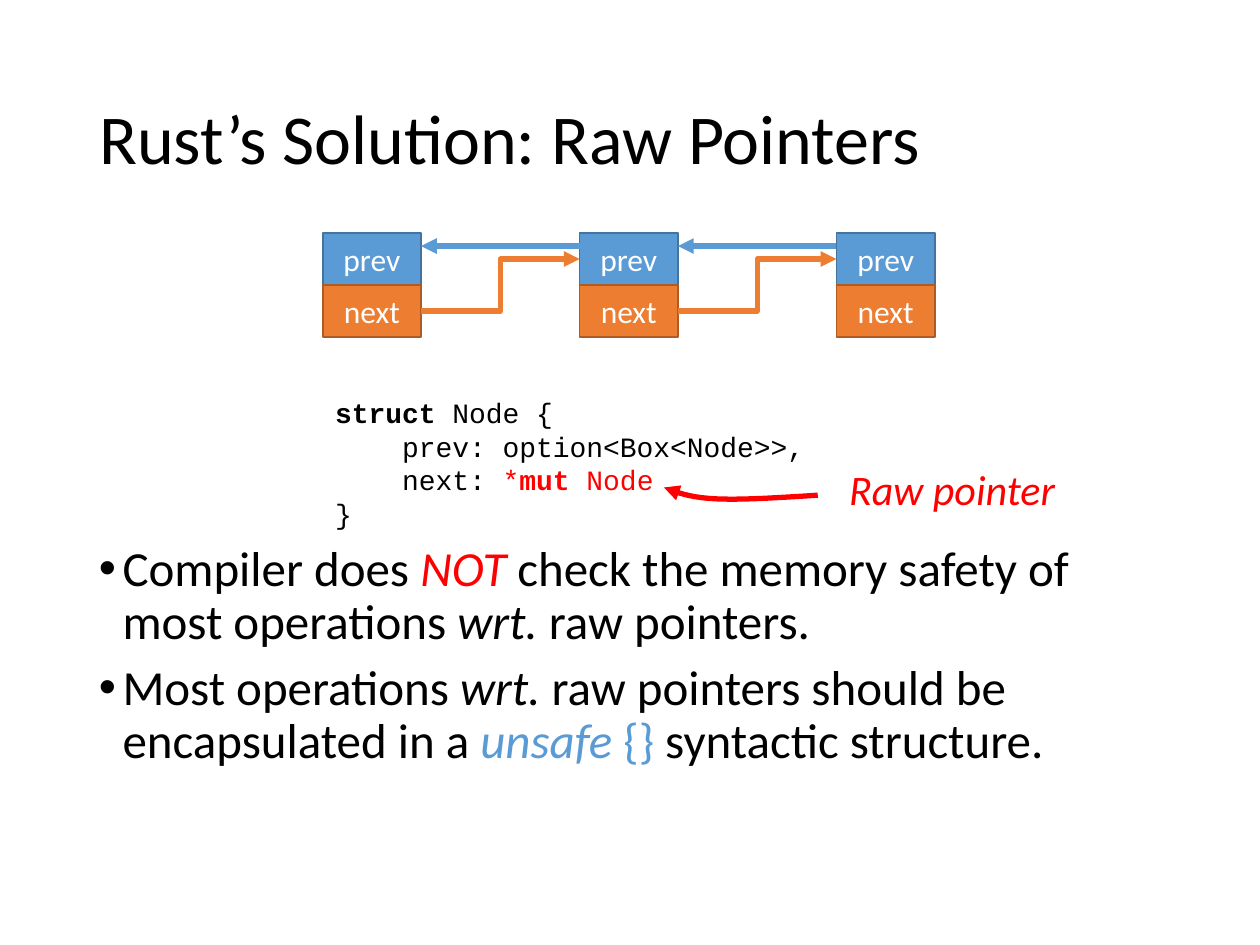
from lxml import etree
from pptx import Presentation
from pptx.dml.color import RGBColor
from pptx.enum.shapes import MSO_CONNECTOR, MSO_SHAPE
from pptx.enum.text import MSO_ANCHOR, MSO_AUTO_SIZE, PP_ALIGN
from pptx.oxml.ns import qn
from pptx.util import Pt

RECTANGLE = MSO_SHAPE.RECTANGLE
STRAIGHT, ELBOW = MSO_CONNECTOR.STRAIGHT, MSO_CONNECTOR.ELBOW
MIDDLE = MSO_ANCHOR.MIDDLE
LEFT, CENTER = PP_ALIGN.LEFT, PP_ALIGN.CENTER
NO_AUTOFIT, GROW = MSO_AUTO_SIZE.NONE, MSO_AUTO_SIZE.SHAPE_TO_FIT_TEXT
LEFT_SIDE, RIGHT_SIDE = 1, 3
TITLE_ONLY = 5

BLACK, WHITE, RED = "000000", "FFFFFF", "FF0000"
BLUE, DARK_BLUE = "5B9BD5", "43739E"
ORANGE, DARK_ORANGE = "ED7D31", "AF5C24"
SANS, MONO = "Calibri", "Courier New"


def color(value):
    return RGBColor.from_string(value)


def bezier(start, first, second, end, steps=10):
    """Return points along a cubic curve, without its start."""
    points = []
    for step in range(1, steps + 1):
        t = step / steps
        weights = ((1 - t) ** 3, 3 * t * (1 - t) ** 2, 3 * t * t * (1 - t), t ** 3)
        points.append(tuple(
            sum(w * p[axis] for w, p in zip(weights, (start, first, second, end)))
            for axis in (0, 1)))
    return points


class SlideBuilder:
    """Holds the style and the current slide; lengths are in points."""

    arrow_width = 3
    border_width = 1

    def __init__(self, slide):
        self.slide = slide
        self.shapes = slide.shapes

    def set_font(self, font, size, name=SANS, fill=BLACK):
        font.size, font.name = Pt(size), name
        font.color.rgb = color(fill)

    def add_spans(self, para, spans):
        """Add runs given as plain text or as (text, font settings)."""
        for item in spans:
            text, look = (item, {}) if isinstance(item, str) else item
            span = para.add_run()
            span.text = text
            if "fill" in look:
                span.font.color.rgb = color(look["fill"])
            if "bold" in look:
                span.font.bold = look["bold"]
            if "italic" in look:
                span.font.italic = look["italic"]

    def title(self, text, left, top, width, height):
        box = self.shapes.title
        box.left, box.top = Pt(left), Pt(top)
        box.width, box.height = Pt(width), Pt(height)
        frame = box.text_frame
        frame.text = text
        frame.auto_size = NO_AUTOFIT
        frame.vertical_anchor = MIDDLE
        para = frame.paragraphs[0]
        para.alignment = LEFT
        para.line_spacing = 0.9
        self.set_font(para.font, 40)

    def text(self, paragraphs, left, top, width, height, size, name=SANS,
             fill=BLACK, wrap=True, autosize=GROW, bullets=False):
        box = self.shapes.add_textbox(Pt(left), Pt(top), Pt(width), Pt(height))
        frame = box.text_frame
        frame.word_wrap = wrap
        frame.auto_size = autosize
        for index, spans in enumerate(paragraphs):
            para = frame.add_paragraph() if index else frame.paragraphs[0]
            if bullets:
                self.bullet(para)
                para.line_spacing = 0.9
                para.space_before = Pt(7.5 if index else 0)
            self.set_font(para.font, size, name, fill)
            self.add_spans(para, spans)

    def bullet(self, para, indent=13.5):
        properties = para._p.get_or_add_pPr()
        properties.set("marL", str(Pt(indent)))
        properties.set("indent", str(-Pt(indent)))
        etree.SubElement(properties, qn("a:buFont")).set("typeface", "Arial")
        etree.SubElement(properties, qn("a:buChar")).set("char", "•")

    def cell(self, label, left, top, width, height, fill, border):
        box = self.shapes.add_shape(
            RECTANGLE, Pt(left), Pt(top), Pt(width), Pt(height))
        box.shadow.inherit = False
        box.fill.solid()
        box.fill.fore_color.rgb = color(fill)
        box.line.color.rgb = color(border)
        box.line.width = Pt(self.border_width)
        frame = box.text_frame
        frame.text = label
        frame.vertical_anchor = MIDDLE
        para = frame.paragraphs[0]
        para.alignment = CENTER
        self.set_font(para.font, 18, fill=WHITE)
        return box

    def style_arrow(self, shape, fill):
        shape.line.color.rgb = color(fill)
        shape.line.width = Pt(self.arrow_width)
        outline = shape._element.spPr.find(qn("a:ln"))
        etree.SubElement(outline, qn("a:tailEnd")).set("type", "triangle")

    def arrow(self, kind, start, end, fill):
        line = self.shapes.add_connector(
            kind, *(Pt(value) for value in (*start, *end)))
        self.style_arrow(line, fill)
        etree.SubElement(line._element.spPr, qn("a:effectLst"))
        return line

    def curved_arrow(self, points, fill):
        points = [(Pt(x), Pt(y)) for x, y in points]
        builder = self.shapes.build_freeform(*points[0])
        builder.add_line_segments(points[1:], close=False)
        curve = builder.convert_to_shape()
        curve.shadow.inherit = False
        curve.fill.background()
        self.style_arrow(curve, fill)


def draw_linked_list(page):
    left, top, width, height, pitch = 184.4, 133.2, 56.2, 29.7, 146.8
    nodes = []
    for index in range(3):
        x = left + index * pitch
        nodes.append((
            page.cell("prev", x, top, width, height, BLUE, DARK_BLUE),
            page.cell("next", x, top + height, width, height, ORANGE, DARK_ORANGE)))
    for index in range(2):
        start_x = left + index * pitch + width
        end_x = left + (index + 1) * pitch
        link = page.arrow(ELBOW, (start_x, top + 1.5 * height),
                          (end_x, top + height / 2), ORANGE)
        link.begin_connect(nodes[index][1], RIGHT_SIDE)
        link.end_connect(nodes[index + 1][0], LEFT_SIDE)
        back_y = top + height / 4
        page.arrow(STRAIGHT, (end_x, back_y), (start_x, back_y), BLUE)


def main():
    deck = Presentation()
    deck.slide_width, deck.slide_height = Pt(720), Pt(540)
    page = SlideBuilder(deck.slides.add_slide(deck.slide_layouts[TITLE_ONLY]))

    page.title("Rust’s Solution: Raw Pointers", 49.5, 28.75, 621, 104.4)

    italic = {"italic": True}
    page.text([
        ["Compiler does ", ("NOT", {"fill": RED, "italic": True}),
         " check the memory safety of most operations ", ("wrt. ", italic),
         "raw pointers."],
        ["Most operations ", ("wrt.", italic),
         " raw pointers should be encapsulated in a ",
         ("unsafe ", {"fill": BLUE, "italic": True}), ("{}", {"fill": BLUE}),
         " syntactic structure."],
    ], 49.5, 307.4, 621, 159, 28, autosize=NO_AUTOFIT, bullets=True)

    draw_linked_list(page)

    page.text([
        [("struct", {"bold": True}), " Node {"],
        ["    prev: option<Box<Node>>,"],
        ["    next: ", ("*", {"fill": RED}),
         ("mut", {"fill": RED, "bold": True}), (" Node", {"fill": RED})],
        ["}"],
    ], 184.4, 222.5, 315.4, 85, 16, name=MONO)
    page.text([[("Raw pointer", italic)]], 478.1, 261.4, 133.9, 36, 24,
              fill=RED, wrap=False)

    tail, bend, tip = (467.3, 283), (409, 285.1), (379.4, 278.6)
    page.curved_arrow(
        [tail]
        + bezier(tail, (445.7, 284.4), (424.1, 285.8), bend)
        + bezier(bend, (394.6, 284.4), (386.6, 281.5), tip), RED)

    deck.save("out.pptx")


if __name__ == "__main__":
    main()
